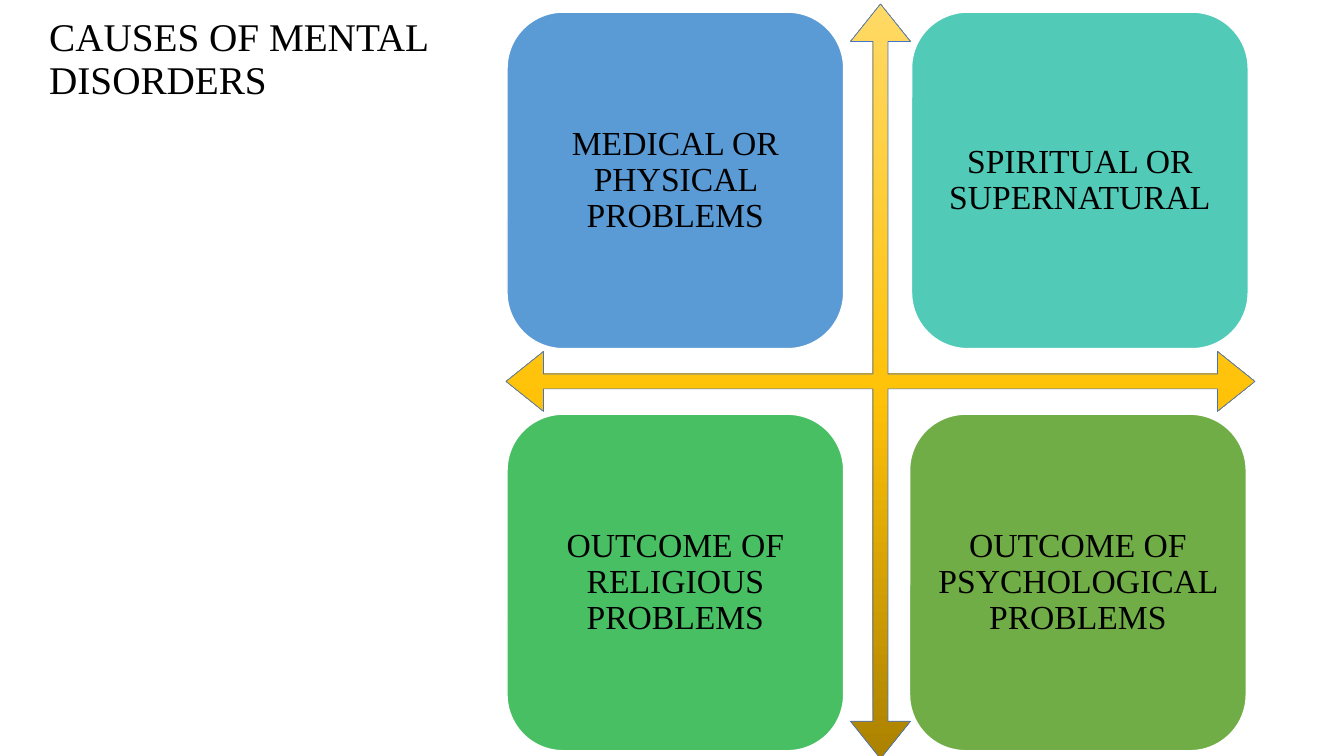
from copy import deepcopy

from pptx import Presentation
from pptx.dml.color import RGBColor
from pptx.enum.shapes import MSO_SHAPE as Shape
from pptx.enum.text import MSO_ANCHOR as Anchor, PP_ALIGN as Align
from pptx.oxml.ns import qn
from pptx.util import Inches, Pt

COLORS = {
    "text": "000000",
    "tile_line": "FFFFFF",
    "arrow_line": "4472C4",
    "arrow_dark": "AB8100",
    "arrow_middle": "FFC208",
    "arrow_light": "FFD966",
    "blue": "5B9BD5",
    "teal": "52CAB8",
    "green": "49BF64",
    "olive": "70AD47",
}


def color(name):
    return RGBColor.from_string(COLORS[name])


class SlideBuilder:
    FONT = "Times New Roman"
    COLUMNS = 40
    LINE_SPACING = 0.9

    def __init__(self, presentation):
        self.unit = presentation.slide_width / self.COLUMNS
        self.slide = presentation.slides.add_slide(presentation.slide_layouts[6])

    def box(self, *cells):
        return [round(cell * self.unit) for cell in cells]

    def set_text(self, shape, text, size, align, anchor):
        frame = shape.text_frame
        frame.word_wrap = True
        frame.vertical_anchor = anchor
        paragraph = frame.paragraphs[0]
        paragraph.text = text
        paragraph.alignment = align
        paragraph.line_spacing = self.LINE_SPACING
        paragraph.font.name = self.FONT
        paragraph.font.size = Pt(size)
        paragraph.font.color.rgb = color("text")

    def title(self, text, column, row, width, height):
        shape = self.slide.shapes.add_textbox(*self.box(column, row, width, height))
        self.set_text(shape, text, 28, Align.LEFT, Anchor.TOP)

    def outlined(self, kind, cells, line, width):
        shape = self.slide.shapes.add_shape(kind, *self.box(*cells))
        shape.shadow.inherit = False
        shape.line.color.rgb = color(line)
        shape.line.width = Pt(width)
        return shape

    def cross_arrow(self, column, row, width, height, stops):
        shape = self.outlined(Shape.QUAD_ARROW, (column, row, width, height), "arrow_line", 0.5)
        for index, value in enumerate((0.02, 0.04, 0.05)):
            shape.adjustments[index] = value
        shape.fill.gradient()
        shape.fill.gradient_angle = 90
        stop_list = shape.element.spPr.find(qn("a:gradFill")).find(qn("a:gsLst"))
        stop_list.insert(1, deepcopy(stop_list[0]))
        for stop, (position, name) in zip(shape.fill.gradient_stops, stops):
            stop.color.rgb = color(name)
            stop.position = position

    def tile(self, text, fill, column, row, side):
        shape = self.outlined(Shape.ROUNDED_RECTANGLE, (column, row, side, side), "tile_line", 1)
        shape.fill.solid()
        shape.fill.fore_color.rgb = color(fill)
        frame = shape.text_frame
        frame.margin_left = frame.margin_right = Inches(0.1)
        frame.margin_top = frame.margin_bottom = Inches(0.1)
        self.set_text(shape, text, 24, Align.CENTER, Anchor.MIDDLE)


def main():
    presentation = Presentation()
    presentation.slide_width = Inches(13.33)
    presentation.slide_height = Inches(7.5)
    builder = SlideBuilder(presentation)

    builder.title("CAUSES OF MENTAL DISORDERS", 1.17, 0.39, 18, 4.74)
    builder.cross_arrow(
        15.06, 0.12, 22.29, 22.47,
        [(0, "arrow_dark"), (0.48, "arrow_middle"), (1, "arrow_light")],
    )

    left, top, bottom, side = 15.09, 0.36, 12.33, 10.02
    causes = [
        ("MEDICAL OR PHYSICAL PROBLEMS", "blue", left, top),
        ("SPIRITUAL OR SUPERNATURAL", "teal", 27.13, top),
        ("OUTCOME OF RELIGIOUS PROBLEMS", "green", left, bottom),
        ("OUTCOME OF PSYCHOLOGICAL PROBLEMS", "olive", 27.07, bottom),
    ]
    for text, fill, column, row in causes:
        builder.tile(text, fill, column, row, side)

    presentation.save("out.pptx")


if __name__ == "__main__":
    main()
